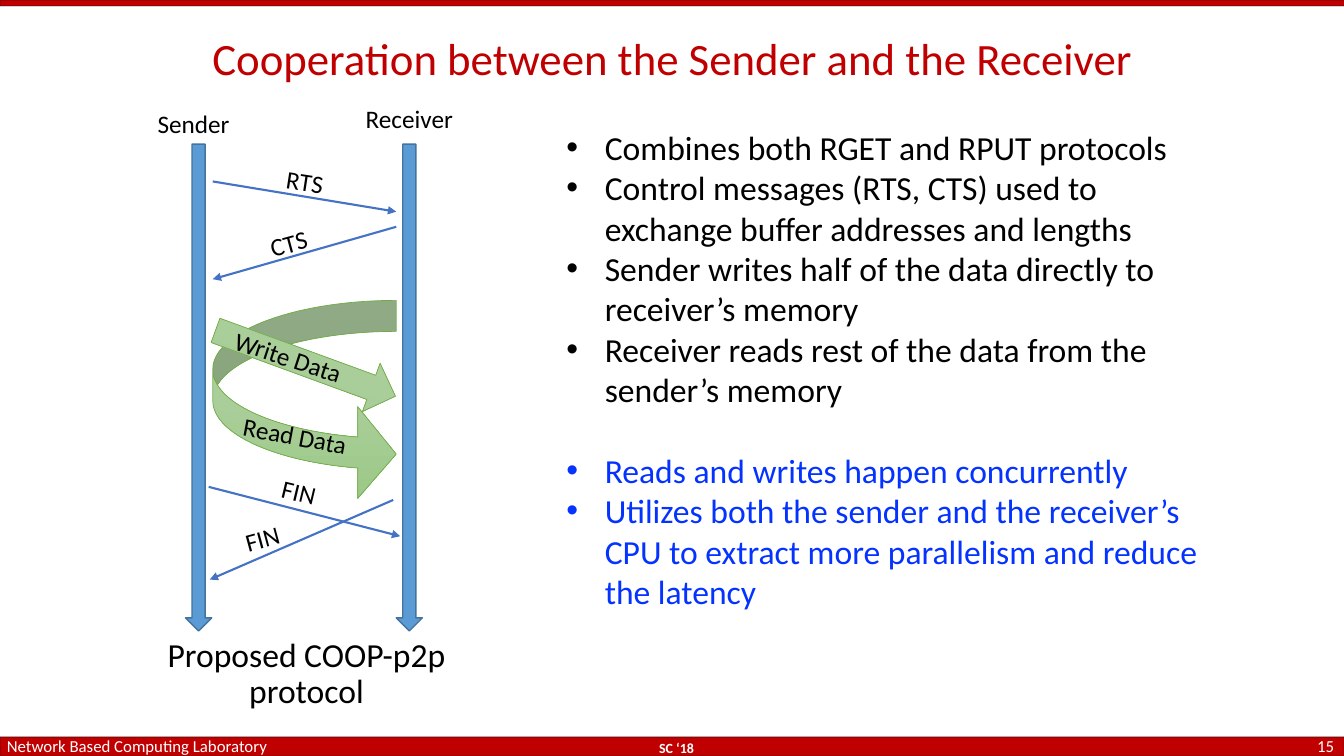
from copy import deepcopy
from dataclasses import dataclass

from lxml import etree
from pptx import Presentation
from pptx import util as u
from pptx.dml.color import RGBColor
from pptx.enum import shapes, text
from pptx.oxml import ns


@dataclass(frozen=True)
class Theme:
    font: str = "Calibri"
    red: str = "C00000"
    black: str = "000000"
    white: str = "FFFFFF"
    accent: str = "0432FF"
    lifeline: str = "5B9BD5"
    lifeline_edge: str = "43739E"
    message: str = "4472C4"
    data_edge: str = "70AD47"
    data_stops: tuple = ((0, "B5D5A7"), (0.5, "AACE9A"), (1, "9CC987"))
    title_size: int = 32
    body_size: int = 24
    label_size: int = 18
    footer_size: int = 12
    event_size: int = 10
    gap_size: int = 29


THEME = Theme()
ROWS, COLUMNS = 75, 133.33
LEFT, CENTER, RIGHT = text.PP_ALIGN.LEFT, text.PP_ALIGN.CENTER, text.PP_ALIGN.RIGHT
TOP, MIDDLE, BOTTOM = (
    text.MSO_ANCHOR.TOP, text.MSO_ANCHOR.MIDDLE, text.MSO_ANCHOR.BOTTOM)

TITLE = "Cooperation between the Sender and the Receiver"
CAPTION = "Proposed COOP-p2p protocol"
DESIGN_POINTS = [
    "Combines both RGET and RPUT protocols",
    "Control messages (RTS, CTS) used to exchange buffer addresses and lengths",
    "Sender writes half of the data directly to receiver’s memory",
    "Receiver reads rest of the data from the sender’s memory",
]
BENEFITS = [
    "Reads and writes happen concurrently",
    "Utilizes both the sender and the receiver’s CPU to extract more "
    "parallelism and reduce the latency",
]
FOOTERS = [
    ("SC ‘18", (53.1, 72.9, 28, 2.6), CENTER, BOTTOM, THEME.event_size, True),
    ("15", (124.5, 73.1, 8.8, 1.8), RIGHT, MIDDLE, THEME.footer_size, False),
    ("Network Based Computing Laboratory", (-0.3, 72.9, 38.1, 2.6),
     LEFT, BOTTOM, THEME.footer_size, False),
]
BANDS = [(0, 73.1, COLUMNS, 1.9), (0, 0, COLUMNS, 0.6)]
LIFELINES = [("Sender", 18.4, (19.2, 12.65)), ("Receiver", 39.3, (40.6, 12.15))]
MESSAGES = [
    ("RTS", (21.1, 18), (39.3, 21), (30.2, 18.35), 8.7),
    ("CTS", (39.3, 22.5), (21.1, 27.7), (28.7, 24.45), -15.1),
    ("FIN", (20.7, 48.3), (39.7, 53.2), (29.6, 49.15), 13.6),
    ("FIN", (39, 49.6), (20.8, 57.5), (26.1, 53.75), -15.1),
]
TRANSFERS = [
    ("Read Data", shapes.MSO_SHAPE.CURVED_RIGHT_ARROW, (21.1, 29.8, 18.2, 19.8),
     0, (0.169, 0.5, 0.21), (29.2, 43.55), 10.8),
    ("Write Data", shapes.MSO_SHAPE.RIGHT_ARROW, (20.8, 33.5, 19, 5.1),
     20.1, (0.5, 0.5), (28.5, 35.75), 18.3),
]

presentation = Presentation()
presentation.slide_width = u.Inches(13.33)
presentation.slide_height = u.Inches(7.5)
slide = presentation.slides.add_slide(presentation.slide_layouts[6])
CELL = presentation.slide_height / ROWS


def grid(*cells):
    return [round(cell * CELL) for cell in cells]


def color(value):
    return RGBColor.from_string(value)


def add_run(paragraph, words, size, ink, bold=False):
    run = paragraph.add_run()
    run.text = words
    run.font.name = THEME.font
    run.font.size = u.Pt(size)
    run.font.bold = bold
    run.font.color.rgb = color(ink)


def add_frame(box, anchor=TOP, wrap=True):
    shape = slide.shapes.add_textbox(*grid(*box))
    shape.text_frame.word_wrap = wrap
    shape.text_frame.vertical_anchor = anchor
    return shape


def add_text(words, box, size, ink, align=CENTER, anchor=MIDDLE, bold=False, spacing=1.0):
    paragraph = add_frame(box, anchor).text_frame.paragraphs[0]
    paragraph.alignment = align
    paragraph.line_spacing = spacing
    add_run(paragraph, words, size, ink, bold)


def add_label(words, center, angle=0, width=10):
    height = 4.7
    box = (center[0] - width / 2, center[1] - height / 2, width, height)
    shape = add_frame(box, wrap=False)
    shape.rotation = angle
    shape.text_frame.margin_left = shape.text_frame.margin_right = 0
    paragraph = shape.text_frame.paragraphs[0]
    paragraph.alignment = CENTER
    add_run(paragraph, words, THEME.label_size, THEME.black)


def add_block(kind, box, edge, weight):
    shape = slide.shapes.add_shape(kind, *grid(*box))
    shape.shadow.inherit = False
    shape.line.color.rgb = color(edge)
    shape.line.width = u.Pt(weight)
    return shape


def fill_solid(shape, value):
    shape.fill.solid()
    shape.fill.fore_color.rgb = color(value)


def fill_gradient(shape):
    shape.fill.gradient()
    shape.fill.gradient_angle = 270
    stop_list = shape.fill._fill._gradFill.find(ns.qn("a:gsLst"))
    stop_list.insert(1, deepcopy(stop_list[0]))
    for stop, (position, value) in zip(shape.fill.gradient_stops, THEME.data_stops):
        stop.position = position
        stop.color.rgb = color(value)


def add_message(start, end):
    connector = slide.shapes.add_connector(
        shapes.MSO_CONNECTOR.STRAIGHT, *grid(*start, *end))
    connector.line.color.rgb = color(THEME.message)
    connector.line.width = u.Pt(1.5)
    etree.SubElement(connector.line._get_or_add_ln(), ns.qn("a:tailEnd"), type="triangle")
    etree.SubElement(connector._element.spPr, ns.qn("a:effectLst"))


def add_bullets(box):
    frame = add_frame(box).text_frame
    points = [(words, THEME.black) for words in DESIGN_POINTS]
    points += [(words, THEME.accent) for words in BENEFITS]
    for index, (words, ink) in enumerate(points):
        paragraph = frame.add_paragraph() if index else frame.paragraphs[0]
        if index == len(DESIGN_POINTS):
            paragraph.space_before = u.Pt(THEME.gap_size)
        properties = paragraph._p.get_or_add_pPr()
        indent = u.Inches(0.38)
        properties.set("marL", str(indent))
        properties.set("indent", str(-indent))
        etree.SubElement(properties, ns.qn("a:buFont"), typeface="Arial")
        etree.SubElement(properties, ns.qn("a:buChar"), char="•")
        add_run(paragraph, words, THEME.body_size, ink)


for box in BANDS:
    band = add_block(shapes.MSO_SHAPE.RECTANGLE, box, THEME.black, 1)
    fill_solid(band, THEME.red)
    edge_color = band.line._ln.find(".//" + ns.qn("a:srgbClr"))
    etree.SubElement(edge_color, ns.qn("a:alpha"), val="25000")

for words, box, align, anchor, size, bold in FOOTERS:
    add_text(words, box, size, THEME.white, align, anchor, bold)

add_text(TITLE, (3.7, 1.9, 126, 8.4), THEME.title_size, THEME.red, spacing=0.9)
add_bullets((55.2, 12.1, 67.2, 55.8))
add_text(CAPTION, (13.4, 64.8, 34, 4.2), THEME.body_size, THEME.black, spacing=0.9)

for role, column, center in LIFELINES:
    lifeline = add_block(
        shapes.MSO_SHAPE.DOWN_ARROW, (column, 14.3, 2.6, 48.3), THEME.lifeline_edge, 1)
    fill_solid(lifeline, THEME.lifeline)
    add_label(role, center)

for words, start, end, center, angle in MESSAGES:
    add_message(start, end)
    add_label(words, center, angle)

for words, kind, box, turn, adjustments, center, angle in TRANSFERS:
    arrow = add_block(kind, box, THEME.data_edge, 0.5)
    arrow.rotation = turn
    for index, value in enumerate(adjustments):
        arrow.adjustments[index] = value
    fill_gradient(arrow)
    add_label(words, center, angle, width=13)

presentation.save("out.pptx")
